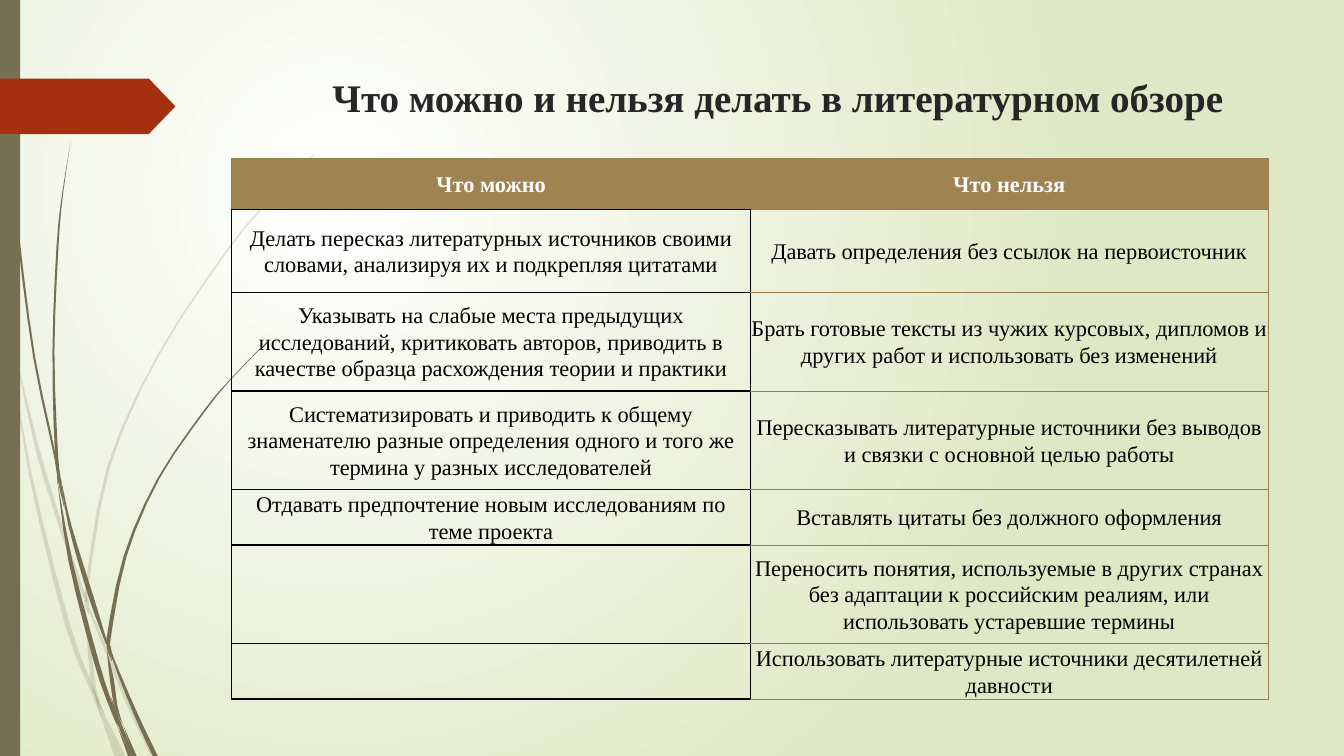
from dataclasses import dataclass
from lxml.etree import SubElement
from pptx import Presentation
from pptx.dml.color import RGBColor
from pptx.enum.shapes import MSO_SHAPE
from pptx.enum.text import MSO_ANCHOR, PP_ALIGN
from pptx.oxml.ns import qn
from pptx.util import Inches, Pt


@dataclass
class Theme:
    font: str = "Times New Roman"
    title_size: float = 27.9
    cell_size: float = 16
    title: str = "262626"
    text: str = "000000"
    white: str = "FFFFFF"
    green: str = "DFE8C4"
    olive: str = "766F54"
    red: str = "A53010"
    header: str = "9F8351"
    rule: str = "987D4D"


theme = Theme()
rgb = RGBColor.from_string


def add_text(tf, text, size, color, bold, spacing):
    tf.word_wrap = True
    p = tf.paragraphs[0]
    p.alignment = PP_ALIGN.CENTER
    p.line_spacing = spacing
    r = p.add_run()
    r.text = text
    r.font.name = theme.font
    r.font.size = Pt(size)
    r.font.bold = bold
    r.font.color.rgb = rgb(color)


def paint(sp, color, alpha=100):
    sp.shadow.inherit = False
    sp.line.fill.background()
    sp.fill.solid()
    sp.fill.fore_color.rgb = rgb(color)
    if alpha < 100:
        clr = sp.fill._xPr.find(qn("a:solidFill"))[0]
        SubElement(clr, qn("a:alpha"), val=str(alpha * 1000))


prs = Presentation()
prs.slide_width, prs.slide_height = Inches(13.33), Inches(7.5)
s = prs.slides.add_slide(prs.slide_layouts[5])

bg = s.background.fill
bg.gradient()
for stop, color in zip(bg.gradient_stops, (theme.white, theme.green)):
    stop.color.rgb = rgb(color)
grad = s.element.find(".//" + qn("a:gradFill"))
grad.remove(grad.find(qn("a:lin")))
circle = SubElement(grad, qn("a:path"), {"path": "circle"})
SubElement(circle, qn("a:fillToRect"), l="50000", t="50000", r="100000", b="100000")

pale_wisps = [
    [(0, 2.9, .03), (.05, 3.19, .03), (.11, 3.5, 0)],
    [(.14, 3.45, 0), (.37, 4.45, .04), (.6, 5.21, .04), (.84, 5.93, .03)],
    [(.88, 6.03, .02), (1.25, 6.93, .04), (1.52, 7.5, .05)],
    [(1.05, 7.11, 0), (1.22, 7.5, .05)],
    [(.11, 3.5, 0), (.3, 4.7, .03), (.67, 6.2, .05), (.93, 6.88, .04), (1.01, 7.14, 0)],
    [(.84, 5.99, 0), (.89, 6.46, .04), (.94, 6.86, .04), (1.05, 7.11, 0)],
    [(3.12, 1.53, .01), (2.68, 1.98, .02), (2.28, 2.45, .02), (1.59, 3.49, .02),
     (1.08, 4.62, .03), (.86, 5.84, .03), (.88, 5.96, 0)],
    [(1.01, 7.14, 0), (1.16, 7.5, .05)],
    [(.85, 5.86, 0), (.86, 5.98, .04), (.88, 6.1, 0)],
    [(.93, 6.83, 0), (1.02, 7.1, .04), (1.19, 7.5, .01)],
]
dark_wisps = [
    [(.04, 0, .01), (.07, 1.1, .01), (.18, 2.33, .02), (.34, 3.55, .02),
     (.55, 4.55, .02), (.57, 4.81, 0)],
    [(.6, 4.72, 0), (.69, 5.2, .03), (.9, 5.91, .05), (1.06, 6.39, .02)],
    [(1.1, 6.41, 0), (1.12, 6.53, .02), (1.34, 7.07, .04), (1.54, 7.5, .05)],
    [(.57, 4.77, 0), (.7, 5.57, .04), (.96, 6.58, .05), (1.1, 7, .04), (1.17, 7.22, 0)],
    [(.7, 1.41, 0), (.62, 1.93, .01), (.57, 2.45, .02), (.53, 3.49, .02),
     (.56, 4.49, .03), (.6, 4.72, 0)],
    [(1.22, 7.19, 0), (1.34, 7.5, .03)],
    [(.55, 4.49, 0), (.59, 4.77, .03), (.64, 5.05, 0)],
    [(2.6, 3.44, .01), (2.31, 3.74, .01), (2.04, 4.06, .02), (1.57, 4.75, .02),
     (1.24, 5.52, .03), (1.08, 6.32, .04), (1.1, 6.41, 0)],
    [(1.17, 7.22, 0), (1.29, 7.5, .04)],
    [(1.06, 6.45, 0), (1.11, 6.74, .04), (1.15, 7, .03), (1.22, 7.19, 0)],
    [(1.06, 6.31, 0), (1.08, 6.43, .04), (1.11, 6.56, 0)],
    [(1.1, 6.91, 0), (1.18, 7.17, .04), (1.32, 7.5, .03)],
]
steps = 3
wisps = [(20, knots) for knots in pale_wisps] + [(100, knots) for knots in dark_wisps]
for alpha, knots in wisps:
    ends = [knots[0], *knots, knots[-1]]
    curve = []
    for a, b, c, d in zip(ends, ends[1:], ends[2:], ends[3:]):
        for t in (i / steps for i in range(steps)):
            curve.append([
                (2 * q + (u - o) * t + (2 * o - 5 * q + 4 * u - v) * t ** 2
                 + (3 * q - o - 3 * u + v) * t ** 3) / 2
                for o, q, u, v in zip(a, b, c, d)])
    curve.append(knots[-1])
    left = [(Inches(x - w / 2), Inches(y)) for x, y, w in curve]
    right = [(Inches(x + w / 2), Inches(y)) for x, y, w in reversed(curve)]
    outline = left + right
    fb = s.shapes.build_freeform(*outline[0])
    fb.add_line_segments(outline[1:], close=True)
    paint(fb.convert_to_shape(), theme.olive, alpha)

bar = s.shapes.add_shape(MSO_SHAPE.RECTANGLE, 0, 0, Inches(.2), prs.slide_height)
paint(bar, theme.olive)
arrow = s.shapes.add_shape(MSO_SHAPE.PENTAGON, 0, Inches(.78), Inches(1.74), Inches(.55))
arrow.adjustments[0] = .48
paint(arrow, theme.red)

title = s.shapes.title
title.left, title.top = Inches(2.84), Inches(.68)
title.width, title.height = Inches(9.75), Inches(.77)
tf = title.text_frame
tf.vertical_anchor = MSO_ANCHOR.TOP
tf.margin_top = Inches(.05)
add_text(tf, "Что можно и нельзя делать в литературном обзоре",
         theme.title_size, theme.title, True, 1)

rows = [
    (.51, "Что можно", "Что нельзя"),
    (.82, "Делать пересказ литературных источников своими словами, анализируя их и подкрепляя цитатами",
     "Давать определения без ссылок на первоисточник"),
    (.98, "Указывать на слабые места предыдущих исследований, критиковать авторов, приводить в качестве образца расхождения теории и практики",
     "Брать готовые тексты из чужих курсовых, дипломов и других работ и использовать без изменений"),
    (.98, "Систематизировать и приводить к общему знаменателю разные определения одного и того же термина у разных исследователей",
     "Пересказывать литературные источники без выводов и связки с основной целью работы"),
    (.51, "Отдавать предпочтение новым исследованиям по теме проекта",
     "Вставлять цитаты без должного оформления"),
    (.98, "", "Переносить понятия, используемые в других странах без адаптации к российским реалиям, или использовать устаревшие термины"),
    (.51, "", "Использовать литературные источники десятилетней давности"),
]
height = sum(row[0] for row in rows)
table = s.shapes.add_table(len(rows), 2, Inches(2.3), Inches(1.57),
                           Inches(10.28), Inches(height)).table
table.horz_banding = False
for i, (row_height, *texts) in enumerate(rows):
    table.rows[i].height = Inches(row_height)
    for j, text in enumerate(texts):
        cell = table.cell(i, j)
        cell.vertical_anchor = MSO_ANCHOR.MIDDLE
        cell.margin_left = cell.margin_right = Inches(.01)
        cell.margin_top = cell.margin_bottom = Inches(.01)
        head = i == 0
        black = {"L", "R", "T", "B"} if j == 0 else {"L"}
        if head:
            black = {"B"} if j == 0 else set()
        inner = "RL"[j] if head else ""
        tcPr = cell._tc.get_or_add_tcPr()
        for side in "LRTB":
            color, width = (theme.text, 1) if side in black else (theme.rule, .75)
            if side == inner:
                color = theme.header
            ln = SubElement(tcPr, qn(f"a:ln{side}"), w=str(Pt(width)))
            SubElement(SubElement(ln, qn("a:solidFill")), qn("a:srgbClr"), val=color)
        if head:
            cell.fill.solid()
            cell.fill.fore_color.rgb = rgb(theme.header)
        else:
            cell.fill.background()
        if text:
            add_text(cell.text_frame, text, theme.cell_size,
                     theme.white if head else theme.text, head, 1.07)

prs.save("out.pptx")
